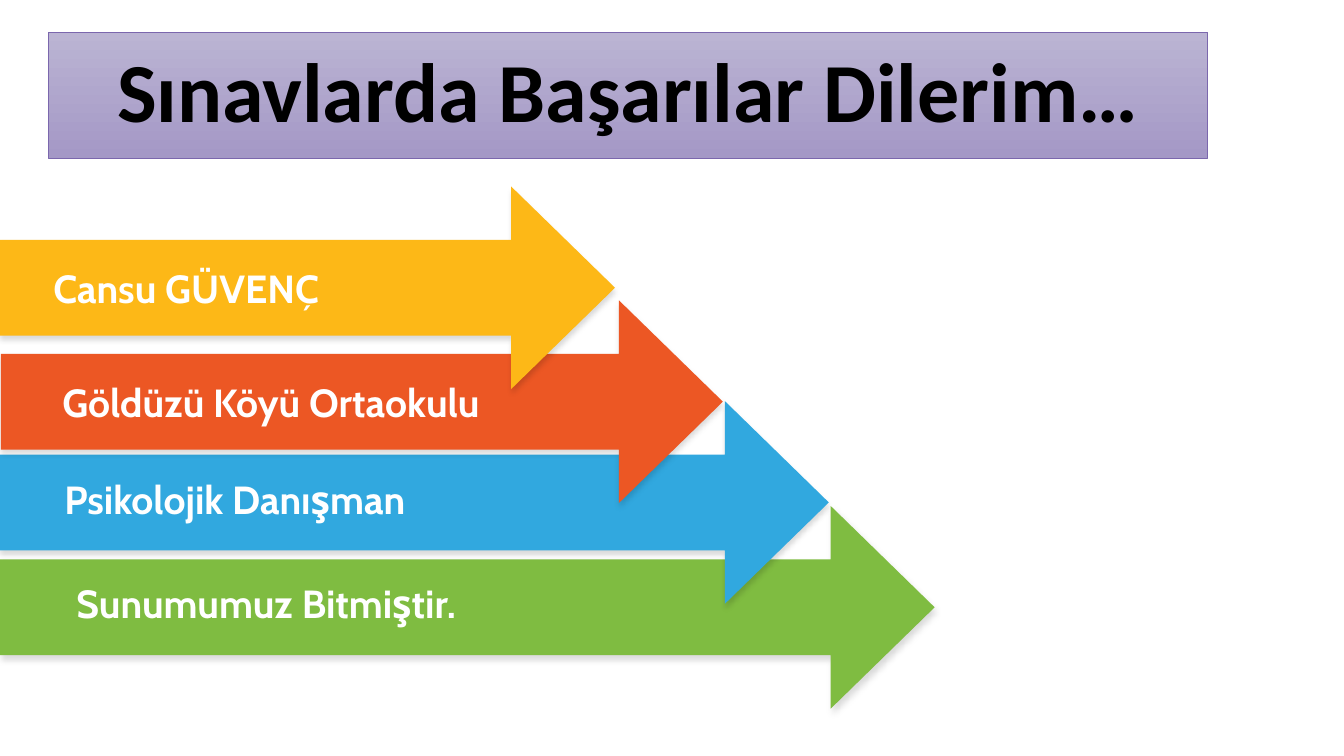
"""Build a closing slide with a title banner and four stepped arrows."""
from dataclasses import dataclass

from lxml import etree
from pptx import Presentation
from pptx.dml.color import RGBColor
from pptx.enum.shapes import MSO_SHAPE
from pptx.enum.text import MSO_ANCHOR, MSO_AUTO_SIZE, PP_ALIGN
from pptx.oxml.ns import qn
from pptx.util import Inches, Pt

RECT = MSO_SHAPE.RECTANGLE
MIDDLE = MSO_ANCHOR.MIDDLE
CENTER = PP_ALIGN.CENTER
GROW = MSO_AUTO_SIZE.SHAPE_TO_FIT_TEXT

BLACK = RGBColor(0x00, 0x00, 0x00)
WHITE = RGBColor(0xFF, 0xFF, 0xFF)
LILAC = RGBColor(0xBB, 0xB4, 0xD3)
VIOLET = RGBColor(0xA4, 0x98, 0xC6)
PURPLE = RGBColor(0x7B, 0x67, 0xAD)
GREEN = RGBColor(0x7F, 0xBC, 0x41)
BLUE = RGBColor(0x31, 0xA8, 0xDF)
ORANGE = RGBColor(0xEC, 0x57, 0x24)
YELLOW = RGBColor(0xFD, 0xB8, 0x17)

TITLE_FONT = {"name": "Calibri", "size": Pt(60), "bold": True}
LABEL_FONT = {"name": "Cabin", "size": Pt(28), "bold": True}
SHADOW = {"blurRad": Pt(4), "dist": Pt(3), "dir": 90 * 60000,
          "algn": "t", "rotWithShape": 0}
SHADOW_ALPHA = 15000

HEAD_LENGTH = 1.03
HEAD_HEIGHT = 2.01
SHAFT_INSET = 0.53


@dataclass(frozen=True)
class Arrow:
    left: float
    top: float
    tip: float
    color: RGBColor


@dataclass(frozen=True)
class Label:
    text: str
    left: float
    top: float
    width: float


ARROWS = [
    Arrow(0, 5.02, 9.27, GREEN),
    Arrow(0, 3.98, 8.22, BLUE),
    Arrow(0.01, 2.98, 7.17, ORANGE),
    Arrow(0, 1.85, 6.1, YELLOW),
]
LABELS = [
    Label("Cansu GÜVENÇ", 0.43, 2.57, 4.41),
    Label("Göldüzü Köyü Ortaokulu", 0.52, 3.7, 5.02),
    Label("Sunumumuz Bitmiştir.", 0.66, 5.7, 6.21),
    Label("Psikolojik Danışman", 0.54, 4.67, 4.24),
]


def write(p, text: str, font: dict, color: RGBColor) -> None:
    r = p.add_run()
    r.text = text
    for name, value in font.items():
        setattr(r.font, name, value)
    r.font.color.rgb = color


def add_title(s, text: str) -> None:
    sp = s.shapes.add_shape(RECT, Inches(0.48), Inches(0.32), Inches(11.5), Inches(1.25))
    sp.shadow.inherit = False
    sp.fill.gradient()
    sp.fill.gradient_angle = 270
    for stop, color in zip(sp.fill.gradient_stops, (LILAC, VIOLET)):
        stop.color.rgb = color
    sp.line.color.rgb = PURPLE
    sp.line.width = Pt(0.5)
    tf = sp.text_frame
    tf.word_wrap = True
    tf.vertical_anchor = MIDDLE
    p = tf.paragraphs[0]
    p.alignment = CENTER
    p.line_spacing = 0.9
    write(p, text, TITLE_FONT, BLACK)


def add_shadow(sp) -> None:
    sp.shadow.inherit = False
    effects = sp.element.spPr.find(qn("a:effectLst"))
    shadow = etree.SubElement(effects, qn("a:outerShdw"))
    for name, value in SHADOW.items():
        shadow.set(name, str(value))
    color = etree.SubElement(shadow, qn("a:srgbClr"), val=str(BLACK))
    etree.SubElement(color, qn("a:alpha"), val=str(SHADOW_ALPHA))


def add_arrow(s, arrow: Arrow) -> None:
    neck = arrow.tip - HEAD_LENGTH
    bottom = arrow.top + HEAD_HEIGHT
    shaft_top, shaft_bottom = arrow.top + SHAFT_INSET, bottom - SHAFT_INSET
    points = [
        (neck, arrow.top), (neck, shaft_top), (arrow.left, shaft_top),
        (arrow.left, shaft_bottom), (neck, shaft_bottom), (neck, bottom),
    ]
    outline = s.shapes.build_freeform(Inches(arrow.tip), Inches(arrow.top + HEAD_HEIGHT / 2))
    outline.add_line_segments([(Inches(x), Inches(y)) for x, y in points], close=True)
    sp = outline.convert_to_shape()
    sp.fill.solid()
    sp.fill.fore_color.rgb = arrow.color
    sp.line.fill.background()
    add_shadow(sp)


def add_label(s, label: Label) -> None:
    sp = s.shapes.add_textbox(Inches(label.left), Inches(label.top),
                              Inches(label.width), Inches(0.57))
    tf = sp.text_frame
    tf.word_wrap = True
    tf.auto_size = GROW
    write(tf.paragraphs[0], label.text, LABEL_FONT, WHITE)


def main() -> None:
    prs = Presentation()
    prs.slide_width, prs.slide_height = Inches(13.33), Inches(7.5)
    s = prs.slides.add_slide(prs.slide_layouts[6])
    add_title(s, "Sınavlarda Başarılar Dilerim…")
    for arrow in ARROWS:
        add_arrow(s, arrow)
    for label in LABELS:
        add_label(s, label)
    prs.save("out.pptx")


if __name__ == "__main__":
    main()
